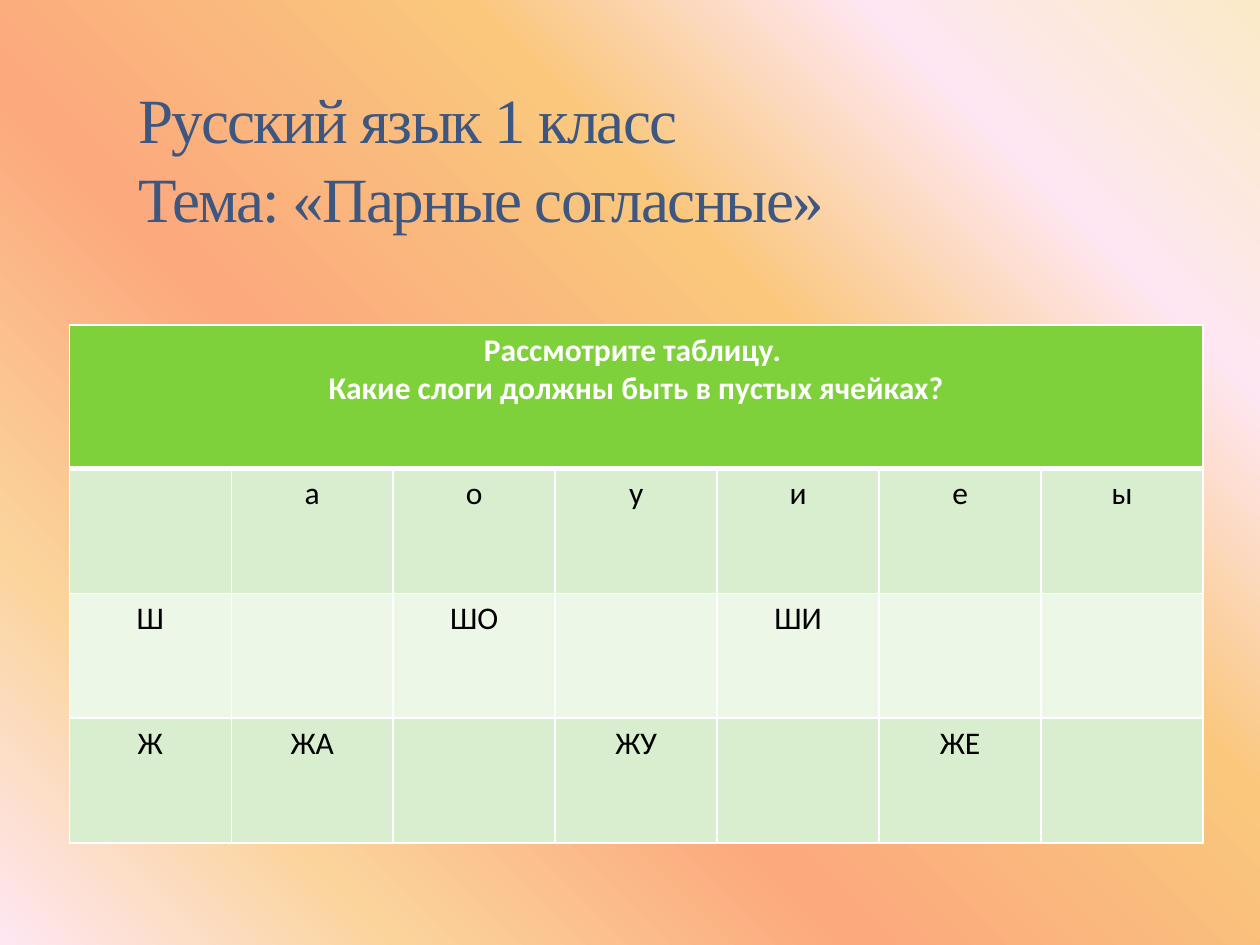
from pptx import Presentation
from pptx.util import Inches, Pt
from pptx.dml.color import RGBColor
from pptx.enum.text import PP_ALIGN
from pptx.oxml.ns import qn
from lxml.etree import SubElement

theme = {
    "serif": "Times New Roman", "sans": "Calibri",
    "title": "3E5780", "head": "7FD13B", "odd": "D8EECE", "even": "ECF7E8",
    "light": "FFFFFF", "dark": "000000",
    "big": 36, "body": 18,
    "sky": [(0, "FBEAC7"), (18, "FEE7F2"), (36, "FAC77D"),
            (61, "FBA97D"), (82, "FBD49C"), (100, "FEE7F2")],
}


def style(part, font, size, color, bold=False):
    part.font.name = font
    part.font.size = Pt(size)
    part.font.bold = bold
    part.font.color.rgb = RGBColor.from_string(color)


def edge(cell, side, width):
    line = SubElement(cell._tc.get_or_add_tcPr(), qn("a:ln" + side), w=str(Pt(width)))
    fill = SubElement(line, qn("a:solidFill"))
    SubElement(fill, qn("a:srgbClr"), val=theme["light"])


deck = Presentation()
deck.slide_width, deck.slide_height = Inches(10), Inches(7.5)
slide = deck.slides.add_slide(deck.slide_layouts[6])

back = slide.background.fill
back.gradient()
back.gradient_angle = 225
stops = next(slide._element.iter(qn("a:gsLst")))
for stop in list(stops):
    stops.remove(stop)
for place, color in theme["sky"]:
    stop = SubElement(stops, qn("a:gs"), pos=str(place * 1000))
    SubElement(stop, qn("a:srgbClr"), val=color)

title = slide.shapes.add_textbox(Inches(1), Inches(0.56), Inches(8.5), Inches(1))
title.text_frame.word_wrap = True
title.text_frame.text = "Русский язык 1 класс\vТема: «Парные согласные»"
para = title.text_frame.paragraphs[0]
para.line_spacing = 1.05
for run in para.runs:
    style(run, theme["serif"], theme["big"], theme["title"])
    run.font._element.set("spc", "-100")

rows = [
    ["Рассмотрите таблицу. \nКакие слоги должны быть в пустых ячейках?"] + [""] * 6,
    ["", "а", "о", "у", "и", "е", "ы"],
    ["Ш", "", "ШО", "", "ШИ", "", ""],
    ["Ж", "ЖА", "", "ЖУ", "", "ЖЕ", ""],
]
fills = [theme["head"], theme["odd"], theme["even"], theme["odd"]]
highs = [1.14, 0.99, 0.99, 0.99]

frame = slide.shapes.add_table(4, 7, Inches(0.55), Inches(2.58), Inches(9), Inches(4.11))
table = frame.table
table.cell(0, 0).merge(table.cell(0, 6))
for col in table.columns:
    col.width = Inches(9 / 7)

for r, words in enumerate(rows):
    table.rows[r].height = Inches(highs[r])
    for c, word in enumerate(words):
        cell = table.cell(r, c)
        for side in "LRTB":
            thick = (r, side) in [(0, "B"), (1, "T")]
            edge(cell, side, 3 if thick else 1)
        cell.fill.solid()
        cell.fill.fore_color.rgb = RGBColor.from_string(fills[r])
        cell.text_frame.text = word
        ink = theme["dark"] if r else theme["light"]
        for para in cell.text_frame.paragraphs:
            para.alignment = PP_ALIGN.CENTER
            for part in para.runs or [para]:
                style(part, theme["sans"], theme["body"], ink, r == 0)

deck.save("out.pptx")
